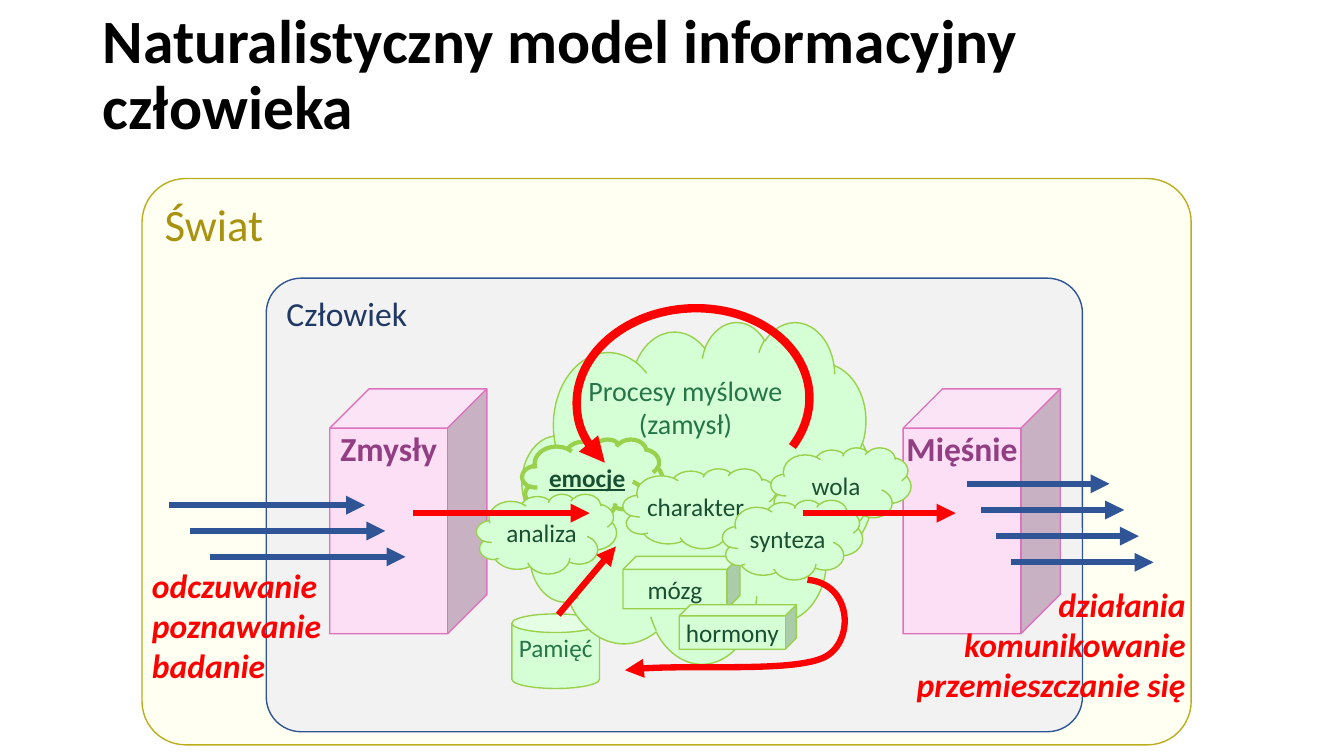
from pptx import Presentation
from pptx.dml.color import RGBColor
from pptx.enum.shapes import MSO_CONNECTOR as Link, MSO_SHAPE as Preset
from pptx.enum.text import MSO_ANCHOR as Anchor, PP_ALIGN as Align
from pptx.oxml.ns import qn
from pptx.oxml.xmlchemy import OxmlElement
from pptx.util import Cm, Pt

BLACK = RGBColor(0x00, 0x00, 0x00)
RED = RGBColor(0xFF, 0x00, 0x00)
BLUE = RGBColor(0x2F, 0x55, 0x97)
NAVY = RGBColor(0x20, 0x38, 0x64)
GREY = RGBColor(0xF2, 0xF2, 0xF2)
CREAM = RGBColor(0xFF, 0xFF, 0xF2)
OLIVE = RGBColor(0xBB, 0xAD, 0x1D)
DARK_OLIVE = RGBColor(0xA9, 0x92, 0x0F)
PINK = RGBColor(0xFC, 0xDE, 0xF5)
ROSE = RGBColor(0xDD, 0x73, 0xBC)
PURPLE = RGBColor(0x92, 0x3E, 0x83)
MINT = RGBColor(0xD5, 0xFF, 0xD4)
LIME = RGBColor(0x99, 0xD1, 0x4D)
GREEN = RGBColor(0x25, 0x75, 0x49)
DARK_GREEN = RGBColor(0x19, 0x4F, 0x31)


def write(frame, text, size, color, align=Align.LEFT, anchor=Anchor.TOP,
          bold=False, italic=False, underline=False, spacing=None):
    """Fill a text frame with evenly formatted paragraphs."""
    frame.word_wrap = True
    frame.vertical_anchor = anchor
    frame.text = text
    for paragraph in frame.paragraphs:
        paragraph.alignment = align
        if spacing:
            paragraph.line_spacing = spacing
        for run in paragraph.runs:
            font = run.font
            font.name = "Calibri"
            font.size = Pt(size)
            font.color.rgb = color
            font.bold, font.italic, font.underline = bold, italic, underline


def add_label(slide, box, text, size, color, **style):
    """Add a free-standing text box."""
    label = slide.shapes.add_textbox(*map(Cm, box))
    write(label.text_frame, text, size, color, **style)


def add_block(slide, preset, box, fill, outline, width=1):
    """Add a filled and outlined preset shape."""
    block = slide.shapes.add_shape(preset, *map(Cm, box))
    block.shadow.inherit = False
    block.fill.solid()
    block.fill.fore_color.rgb = fill
    block.line.color.rgb = outline
    block.line.width = Pt(width)
    return block


def add_frame(slide, box, fill, outline, text, size, color):
    """Add a rounded frame titled in its top left corner."""
    frame = add_block(slide, Preset.ROUNDED_RECTANGLE, box, fill, outline)
    frame.adjustments[0] = 0.077
    write(frame.text_frame, text, size, color)


def add_part(slide, preset, box, fill, outline, text, size, color, width=1, **style):
    """Add a shape with centred text and no inner margins."""
    frame = add_block(slide, preset, box, fill, outline, width).text_frame
    frame.margin_left = frame.margin_top = frame.margin_right = frame.margin_bottom = 0
    write(frame, text, size, color, align=Align.CENTER, **style)


def add_mind_part(slide, preset, box, text, width=1, **style):
    """Add a green part of the mind."""
    add_part(slide, preset, box, MINT, LIME, text, 18, DARK_GREEN, width,
             anchor=Anchor.MIDDLE, **style)


def style_arrow(stroke, color, width=4.5):
    """Colour a stroke and end it with a triangle."""
    stroke.line.color.rgb = color
    stroke.line.width = Pt(width)
    tip = OxmlElement("a:tailEnd")
    tip.set("type", "triangle")
    stroke.element.spPr.find(qn("a:ln")).append(tip)


def add_arrow(slide, x1, y1, x2, y2, color):
    """Add a straight arrow."""
    arrow = slide.shapes.add_connector(Link.STRAIGHT, Cm(x1), Cm(y1), Cm(x2), Cm(y2))
    style_arrow(arrow, color)
    arrow.element.spPr.append(OxmlElement("a:effectLst"))


def add_arrow_cascade(slide, count, left, top, length, shift, drop):
    """Add parallel blue arrows, each moved right and down."""
    for step in range(count):
        x, y = left + step * shift, top + step * drop
        add_arrow(slide, x, y, x + length, y, BLUE)


def add_thought_loop(slide):
    """Add the red arc that circles back over the thought processes."""
    loop = slide.shapes.add_shape(Preset.ARC, Cm(14.53), Cm(7.77), Cm(5.87), Cm(4.65))
    loop.shadow.inherit = False
    loop.adjustments[0], loop.adjustments[1] = 91.06, 19.07
    loop.rotation = 176.6
    loop.element.spPr.find(qn("a:xfrm")).set("flipV", "1")
    loop.fill.background()
    style_arrow(loop, RED, 6)


def add_feedback_curve(slide):
    """Add the red Bézier arrow from synthesis back to memory."""
    start, *controls = [
        (Cm(x), Cm(y)) for x, y in (
            (20.35, 14.61), (21.49, 14.71), (21.54, 16.18), (20.78, 16.56),
            (20.02, 16.94), (16.92, 16.71), (15.75, 16.89))]
    builder = slide.shapes.build_freeform(*start)
    builder.add_line_segments(controls, close=False)
    feedback = builder.convert_to_shape()
    segments = feedback.element.xpath(".//a:lnTo")
    for first in range(0, len(segments), 3):
        bend = OxmlElement("a:cubicBezTo")
        segments[first].addprevious(bend)
        for segment in segments[first:first + 3]:
            bend.append(segment[0])
            segment.getparent().remove(segment)
    feedback.shadow.inherit = False
    feedback.fill.background()
    style_arrow(feedback, RED)


def add_mind(slide):
    """Add memory, the thought cloud and its parts."""
    add_part(slide, Preset.CAN, (12.9, 15.47, 2.21, 1.88), MINT, LIME,
             "Pamięć", 18, GREEN)
    add_part(slide, Preset.CLOUD, (13.16, 8.1, 8.86, 8.61), MINT, LIME,
             "Procesy myślowe\n(zamysł)", 20, GREEN)
    add_mind_part(slide, Preset.CUBE, (15.7, 14.02, 2.95, 1.32), "mózg")
    add_mind_part(slide, Preset.CLOUD, (13.16, 11.07, 3.53, 2.01), "emocje",
                  width=3, bold=True, underline=True)
    for text, left, top, width in (
            ("analiza", 12.01, 12.45, 3.53), ("charakter", 15.7, 11.81, 3.94),
            ("wola", 19.43, 11.28, 3.53), ("synteza", 18.21, 12.6, 3.53)):
        add_mind_part(slide, Preset.CLOUD, (left, top, width, 2.01), text)
    add_mind_part(slide, Preset.CUBE, (17.12, 15.24, 2.95, 1.12), "hormony")


def main():
    """Build the slide and save it."""
    deck = Presentation()
    deck.slide_width, deck.slide_height = Cm(33.87), Cm(19.05)
    slide = deck.slides.add_slide(deck.slide_layouts[6])

    add_frame(slide, (3.58, 4.5, 26.44, 14.27), CREAM, OLIVE, "Świat", 32, DARK_OLIVE)
    add_frame(slide, (6.71, 7.01, 20.57, 11.43), GREY, BLUE, "Człowiek", 24, NAVY)
    for text, left in (("Mięśnie", 22.76), ("Zmysły", 8.31)):
        add_part(slide, Preset.CUBE, (left, 9.8, 3.96, 6.17), PINK, ROSE,
                 text, 24, PURPLE, bold=True)
    add_arrow_cascade(slide, 4, 24.36, 12.19, 3.6, 0.37, 0.66)
    add_arrow_cascade(slide, 3, 4.27, 12.73, 4.93, 0.51, 0.65)

    add_mind(slide)
    add_arrow(slide, 20.24, 12.93, 24.08, 12.93, RED)
    add_arrow(slide, 10.41, 12.93, 14.86, 12.93, RED)
    add_feedback_curve(slide)
    add_arrow(slide, 14.07, 15.49, 15.52, 13.77, RED)
    add_thought_loop(slide)

    add_label(slide, (2.34, 0, 29.21, 3.86),
              "Naturalistyczny model informacyjny człowieka", 44, BLACK,
              anchor=Anchor.MIDDLE, bold=True, spacing=0.9)
    add_label(slide, (3.58, 14.1, 5.87, 3.33), "odczuwanie\npoznawanie\nbadanie",
              24, RED, bold=True, italic=True)
    add_label(slide, (22.56, 14.58, 7.57, 3.33),
              "działania\nkomunikowanie\nprzemieszczanie się",
              24, RED, align=Align.RIGHT, bold=True, italic=True)
    deck.save("out.pptx")


if __name__ == "__main__":
    main()
